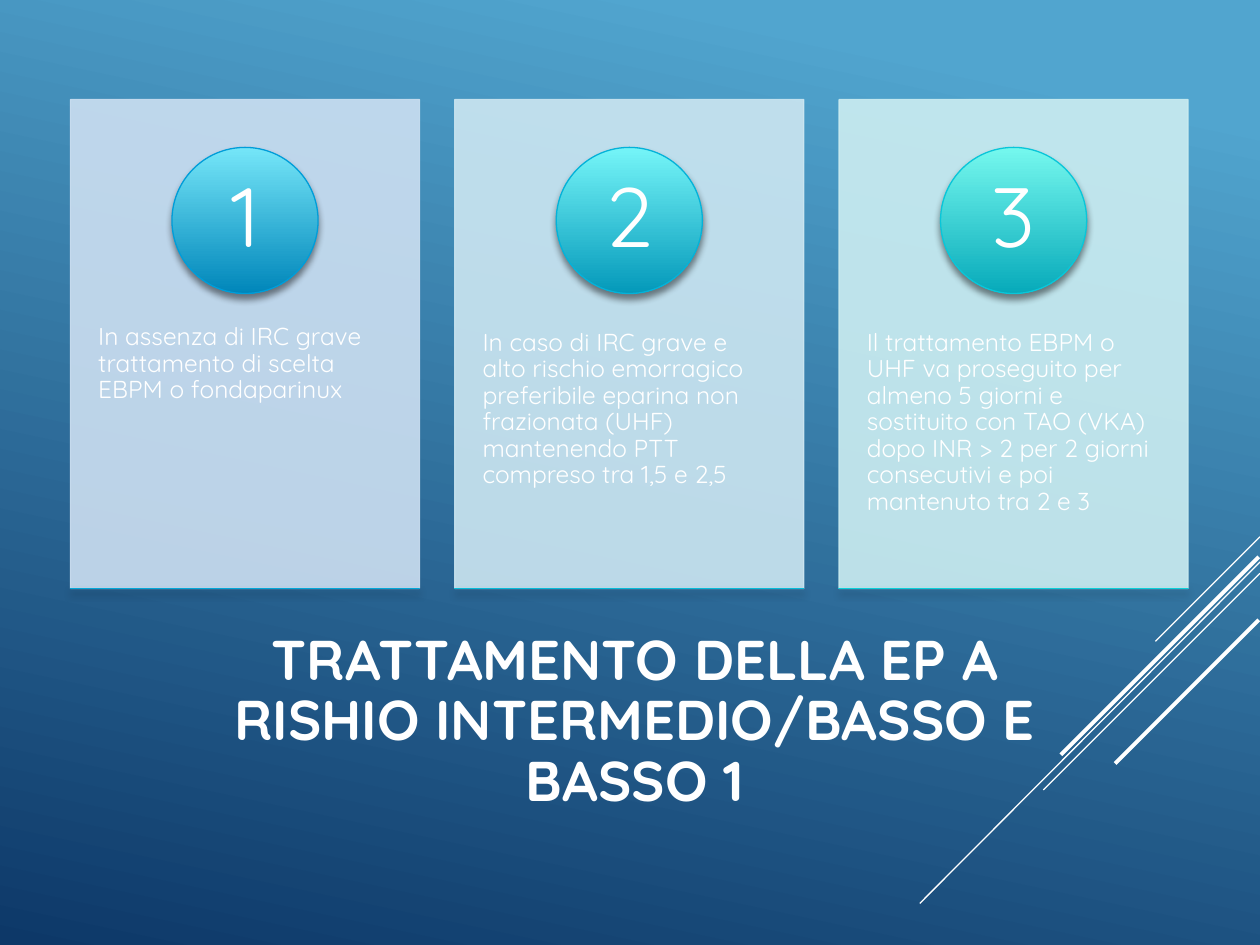
from lxml.etree import SubElement
from pptx import Presentation
from pptx.dml.color import RGBColor
from pptx.enum.shapes import MSO_CONNECTOR, MSO_SHAPE
from pptx.enum.text import MSO_ANCHOR, PP_ALIGN
from pptx.oxml.ns import qn
from pptx.util import Inches, Pt

FONT = "Quicksand"
WHITE = "FFFFFF"
TITLE = "TRATTAMENTO DELLA EP A RISHIO INTERMEDIO/BASSO E BASSO 1"
CARDS = [
    {"text": "In assenza di IRC grave trattamento di scelta EBPM o fondaparinux",
     "panel": "CCDFF1", "circle": ("75E6F8", "0086BA", "009DD9"),
     "bar": ("75EDF8", "0290BA", "02A8D9")},
    {"text": "In caso di IRC grave e alto rischio emorragico preferibile eparina "
             "non frazionata (UHF) mantenendo PTT compreso tra 1,5 e 2,5",
     "panel": "CCE6F1", "circle": ("75F5F8", "0499BA", "04B2D9"),
     "bar": ("75F8F5", "06A1BA", "06BCD9")},
    {"text": "Il trattamento EBPM o UHF va proseguito per almeno 5 giorni e sostituito "
             "con TAO (VKA) dopo INR > 2 per 2 giorni consecutivi e poi mantenuto tra 2 e 3",
     "panel": "CCEDF1", "circle": ("75F8EE", "07AABA", "09C6D9"),
     "bar": ("76F8E7", "09B2BA", "0BD0D9")},
]
DIAGONALS = [
    (10, 4.26, 9.17, 5.09, 0.75),
    (10, 4.46, 7.3, 7.17, 0.75),
    (10, 4.55, 8.28, 6.27, 0.75),
    (9.99, 4.42, 8.42, 5.99, 2.25),
    (9.99, 4.92, 8.85, 6.06, 2.25),
]
CARD_LEFT, CARD_TOP, CARD_WIDTH, CARD_HEIGHT, CARD_STEP = 0.56, 0.79, 2.77, 3.88, 3.05
CIRCLE_TOP, CIRCLE_SIZE, NUMBER_SIZE = 1.17, 1.16, 0.82


def color(value):
    return RGBColor.from_string(value)


def apply_gradient(fill, stops, clockwise_angle):
    fill.gradient()
    fill.gradient_angle = 360 - clockwise_angle
    for stop, (position, value) in zip(fill.gradient_stops, stops):
        stop.position = position
        stop.color.rgb = color(value)


def add_alpha(color_element, percent):
    SubElement(color_element, qn("a:alpha"), val=str(percent * 1000))


def add_shadow(shape):
    effects = shape._element.spPr.find(qn("a:effectLst"))
    shadow = SubElement(effects, qn("a:outerShdw"), blurRad=str(Pt(4)), dist=str(Pt(3)),
                        dir="5400000", rotWithShape="0")
    add_alpha(SubElement(shadow, qn("a:srgbClr"), val="000000"), 46)


def add_outlined(page, kind, bounds, line):
    shape = page.shapes.add_shape(kind, *map(Inches, bounds))
    shape.shadow.inherit = False
    shape.line.color.rgb = color(line)
    shape.line.width = Pt(0.75)
    return shape


def add_panel(page, bounds, value):
    panel = add_outlined(page, MSO_SHAPE.RECTANGLE, bounds, value)
    panel.fill.solid()
    panel.fill.fore_color.rgb = color(value)
    for color_element in panel._element.spPr.iter(qn("a:srgbClr")):
        add_alpha(color_element, 90)


def add_glossy(page, kind, bounds, colors):
    light, dark, line = colors
    shape = add_outlined(page, kind, bounds, line)
    apply_gradient(shape.fill, [(0, light), (1, dark)], 90)
    add_shadow(shape)


def add_text(page, text, bounds, size, bold=False, align=PP_ALIGN.CENTER,
             anchor=MSO_ANCHOR.MIDDLE, insets=(0.1, 0.05)):
    box = page.shapes.add_textbox(*map(Inches, bounds))
    frame = box.text_frame
    frame.word_wrap = True
    frame.vertical_anchor = anchor
    frame.margin_left = frame.margin_right = Inches(insets[0])
    frame.margin_top = frame.margin_bottom = Inches(insets[1])
    para = frame.paragraphs[0]
    para.alignment = align
    para.line_spacing = 0.9
    span = para.add_run()
    span.text = text
    span.font.name = FONT
    span.font.size = Pt(size)
    span.font.bold = bold
    span.font.color.rgb = color(WHITE)


def add_diagonal(page, start_x, start_y, end_x, end_y, width):
    line = page.shapes.add_connector(
        MSO_CONNECTOR.STRAIGHT, *map(Inches, (start_x, start_y, end_x, end_y)))
    line.line.color.rgb = color(WHITE)
    line.line.width = Pt(width)
    SubElement(line._element.spPr, qn("a:effectLst"))


def add_card(page, number, card):
    left = CARD_LEFT + (number - 1) * CARD_STEP
    center = left + CARD_WIDTH / 2
    inset = (CIRCLE_SIZE - NUMBER_SIZE) / 2
    add_panel(page, (left, CARD_TOP, CARD_WIDTH, CARD_HEIGHT), card["panel"])
    add_text(page, card["text"], (left, 2.26, CARD_WIDTH, 2.33), 14, align=PP_ALIGN.LEFT,
             anchor=MSO_ANCHOR.TOP, insets=(0.22, 0.36))
    add_glossy(page, MSO_SHAPE.OVAL,
               (center - CIRCLE_SIZE / 2, CIRCLE_TOP, CIRCLE_SIZE, CIRCLE_SIZE), card["circle"])
    add_text(page, str(number),
             (center - NUMBER_SIZE / 2, CIRCLE_TOP + inset, NUMBER_SIZE, NUMBER_SIZE),
             48, insets=(0.09, 0.01))
    add_glossy(page, MSO_SHAPE.RECTANGLE,
               (left, CARD_TOP + CARD_HEIGHT, CARD_WIDTH, 0), card["bar"])


def main():
    deck = Presentation()
    deck.slide_width, deck.slide_height = Inches(10), Inches(7.5)
    page = deck.slides.add_slide(deck.slide_layouts[6])
    apply_gradient(page.background.fill, [(0.1, "51A5CF"), (1, "0D3868")], 102)
    for diagonal in DIAGONALS:
        add_diagonal(page, *diagonal)
    add_text(page, TITLE, (1.54, 4.91, 7, 1.65), 32, bold=True)
    for number, card in enumerate(CARDS, start=1):
        add_card(page, number, card)
    deck.save("out.pptx")


if __name__ == "__main__":
    main()
